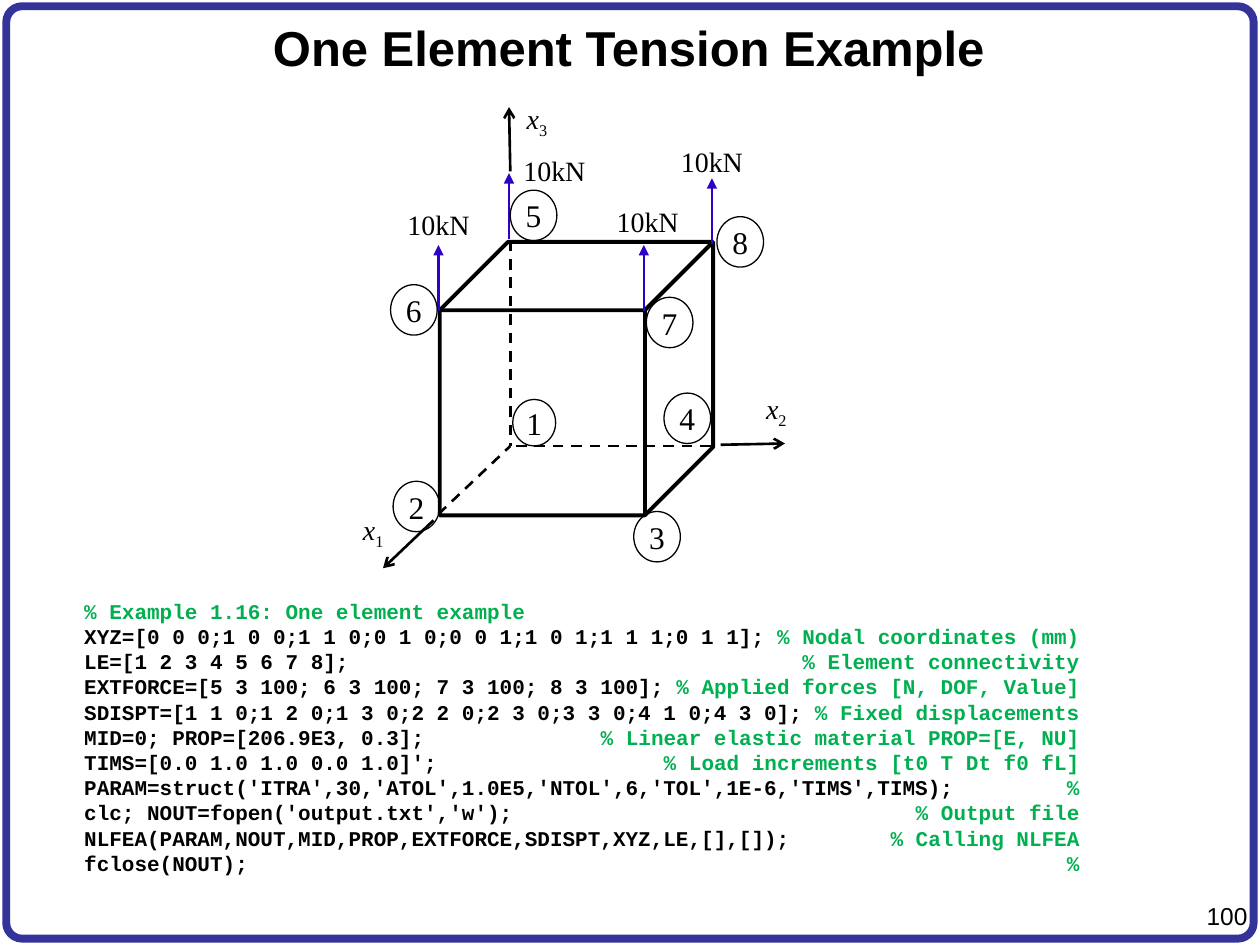
from lxml.etree import SubElement
from pptx import Presentation
from pptx.dml.color import RGBColor
from pptx.enum.dml import MSO_LINE
from pptx.enum.shapes import MSO_CONNECTOR, MSO_SHAPE
from pptx.enum.text import MSO_ANCHOR, MSO_AUTO_SIZE, PP_ALIGN
from pptx.oxml.ns import qn
from pptx.util import Inches, Pt

COLS, ROWS = 100, 75  # grid cells of a tenth of an inch
BLACK, BLUE, GREEN, FRAME = "000000", "2C02C6", "00B050", "333399"
SANS, SERIF, MONO = "Arial", "Times New Roman", "Courier New"


def rgb(value):
    return RGBColor.from_string(value)


def add_run(p, text, font=SERIF, size=16, color=BLACK, bold=False,
            italic=False, baseline=0):
    r = p.add_run()
    r.text = text
    r.font.name, r.font.size = font, Pt(size)
    r.font.bold, r.font.italic = bold, italic
    r.font.color.rgb = rgb(color)
    if baseline:
        r.font._element.set("baseline", str(baseline * 1000))
    return r


class Sheet:
    def __init__(self, prs):
        self.cell_w = prs.slide_width / COLS
        self.cell_h = prs.slide_height / ROWS
        self.slide = prs.slides.add_slide(prs.slide_layouts[5])

    def grid(self, x, y):
        return round(x * self.cell_w), round(y * self.cell_h)

    def box(self, x, y, w, h):
        return *self.grid(x, y), *self.grid(w, h)

    def frame_text(self, tf, inset, anchor=MSO_ANCHOR.TOP, align=PP_ALIGN.LEFT):
        tf.word_wrap = True
        tf.auto_size = MSO_AUTO_SIZE.NONE
        tf.vertical_anchor = anchor
        tf.margin_left = tf.margin_right = Inches(inset)
        tf.margin_top = tf.margin_bottom = Inches(inset / 2)
        tf.paragraphs[0].alignment = align
        return tf.paragraphs[0]

    def title(self, text, *place):
        sp = self.slide.shapes.title
        sp.left, sp.top, sp.width, sp.height = self.box(*place)
        p = self.frame_text(sp.text_frame, 0.1, MSO_ANCHOR.MIDDLE, PP_ALIGN.CENTER)
        add_run(p, text, font=SANS, size=28, bold=True)

    def text(self, *place, inset=0, align=PP_ALIGN.LEFT):
        sp = self.slide.shapes.add_textbox(*self.box(*place))
        return sp.text_frame, self.frame_text(sp.text_frame, inset, align=align)

    def outline(self, kind, *place, color=BLACK, width=0.75, adj=None):
        sp = self.slide.shapes.add_shape(kind, *self.box(*place))
        sp.shadow.inherit = False
        sp.fill.background()
        sp.line.color.rgb, sp.line.width = rgb(color), Pt(width)
        if adj is not None:
            sp.adjustments[0] = adj
        return sp

    def line(self, start, end, color=BLACK, dashed=False, head=None):
        c = self.slide.shapes.add_connector(
            MSO_CONNECTOR.STRAIGHT, *self.grid(*start), *self.grid(*end))
        c.line.color.rgb, c.line.width = rgb(color), Pt(1.5)
        if dashed:
            c.line.dash_style = MSO_LINE.DASH
        if head:
            SubElement(c.line._get_or_add_ln(), qn("a:tailEnd"), type=head)
        SubElement(c._element.spPr, qn("a:effectLst"))

    def node(self, number, x, y, w=3.7, h=4):
        sp = self.outline(MSO_SHAPE.OVAL, x, y, w, h)
        p = self.frame_text(sp.text_frame, 0, MSO_ANCHOR.MIDDLE, PP_ALIGN.CENTER)
        add_run(p, str(number), size=18)

    def load(self, x, y, label_x, label_y):
        self.line((x, y), (x, y - 5.25), BLUE, head="triangle")
        p = self.text(label_x, label_y, 5.8, 3.4, align=PP_ALIGN.CENTER)[1]
        add_run(p, "10kN")

    def axis(self, index, start, end, label_x, label_y):
        self.line(start, end, head="arrow")
        p = self.text(label_x, label_y, 4.2, 5.4)[1]
        add_run(p, "x", italic=True)
        add_run(p, str(index), baseline=-25)

    def listing(self, lines, *place, tab):
        tf, p = self.text(*place, inset=0.1)
        for i, (code, comment) in enumerate(lines):
            p = tf.add_paragraph() if i else p
            # Comments end at a common right tab stop
            if code:
                tabs = SubElement(p._p.get_or_add_pPr(), qn("a:tabLst"))
                SubElement(tabs, qn("a:tab"), pos=str(Inches(tab)), algn="r")
                add_run(p, code + "\t", font=MONO, size=12, bold=True)
            add_run(p, comment, font=MONO, size=12, color=GREEN, bold=True)


LISTING = [
    ("", "% Example 1.16: One element example"),
    ("XYZ=[0 0 0;1 0 0;1 1 0;0 1 0;0 0 1;1 0 1;1 1 1;0 1 1];",
     "% Nodal coordinates (mm)"),
    ("LE=[1 2 3 4 5 6 7 8];", "% Element connectivity"),
    ("EXTFORCE=[5 3 100; 6 3 100; 7 3 100; 8 3 100];",
     "% Applied forces [N, DOF, Value]"),
    ("SDISPT=[1 1 0;1 2 0;1 3 0;2 2 0;2 3 0;3 3 0;4 1 0;4 3 0];",
     "% Fixed displacements"),
    ("MID=0; PROP=[206.9E3, 0.3];", "% Linear elastic material PROP=[E, NU]"),
    ("TIMS=[0.0 1.0 1.0 0.0 1.0]';", "% Load increments [t0 T Dt f0 fL]"),
    ("PARAM=struct('ITRA',30,'ATOL',1.0E5,'NTOL',6,'TOL',1E-6,'TIMS',TIMS);", "%"),
    ("clc; NOUT=fopen('output.txt','w');", "% Output file"),
    ("NLFEA(PARAM,NOUT,MID,PROP,EXTFORCE,SDISPT,XYZ,LE,[],[]);",
     "% Calling NLFEA"),
    ("fclose(NOUT);", "%"),
]
NODES = [(31.2, 38.2), (50.3, 40.6), (52.7, 31.2), (40.5, 15.1),
         (31, 22.6), (51.3, 23.6), (56.9, 17.2)]  # nodes 2 to 8
LOADS = [(40.4, 19, 41.1, 12.2), (34.8, 24.7, 31.9, 16.5),
         (51.1, 24.7, 48.5, 16.2), (56.5, 19.4, 53.6, 11.5)]
AXES = [((34.4, 41.3), (30.4, 45.1), 28.8, 40.7),
        ((57.2, 35.3), (62.3, 35.2), 60.8, 31.1),
        ((40.5, 13.6), (40.4, 8.5), 41.8, 8.1)]


def main():
    prs = Presentation()
    prs.slide_width, prs.slide_height = Inches(10), Inches(7.5)
    s = Sheet(prs)

    # Frame, title and page number
    s.outline(MSO_SHAPE.ROUNDED_RECTANGLE, 0.5, 0.5, 99, 74,
              color=FRAME, width=4.5, adj=0.017)
    s.title("One Element Tension Example", 0.4, 0.5, 99, 6.5)
    p = s.text(94.6, 71, 5.4, 3.3, inset=0.1, align=PP_ALIGN.RIGHT)[1]
    add_run(p, "100", font=SANS, size=14)

    # Program listing
    s.listing(LISTING, 5.7, 47, 82.3, 25.2, tab=7.9)

    # Cube with its hidden edges meeting at node 1
    corner = (40.5, 35.4)
    for end in [(40.5, 19.1), (56.4, 35.4), (34.8, 40.8)]:
        s.line(end, corner, dashed=True)
    s.outline(MSO_SHAPE.CUBE, 34.9, 19.2, 21.7, 21.7, width=2.25, adj=0.25)

    # Loads, axes and node numbers
    for load in LOADS:
        s.load(*load)
    for index, axis in enumerate(AXES, 1):
        s.axis(index, *axis)
    s.node(1, 40.7, 31.7, 3.4, 3.7)
    for number, place in enumerate(NODES, 2):
        s.node(number, *place)

    prs.save("out.pptx")


if __name__ == "__main__":
    main()
